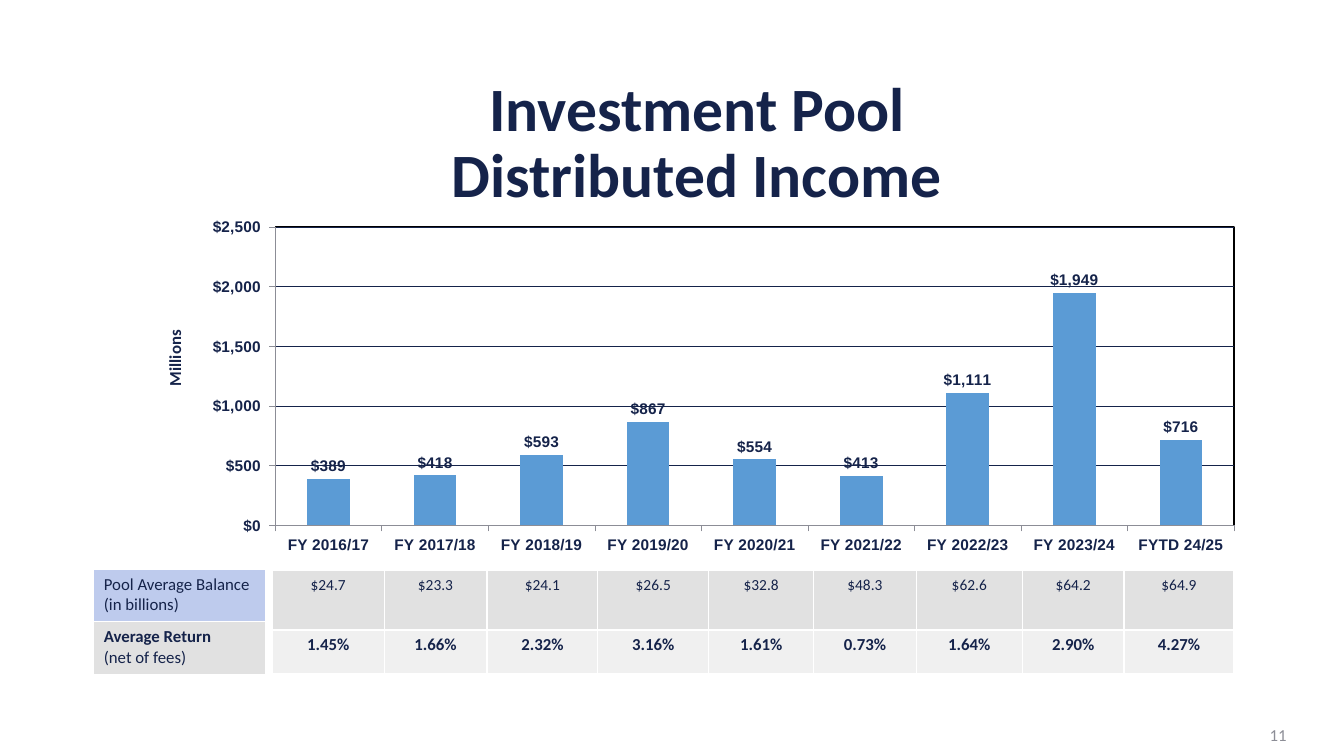
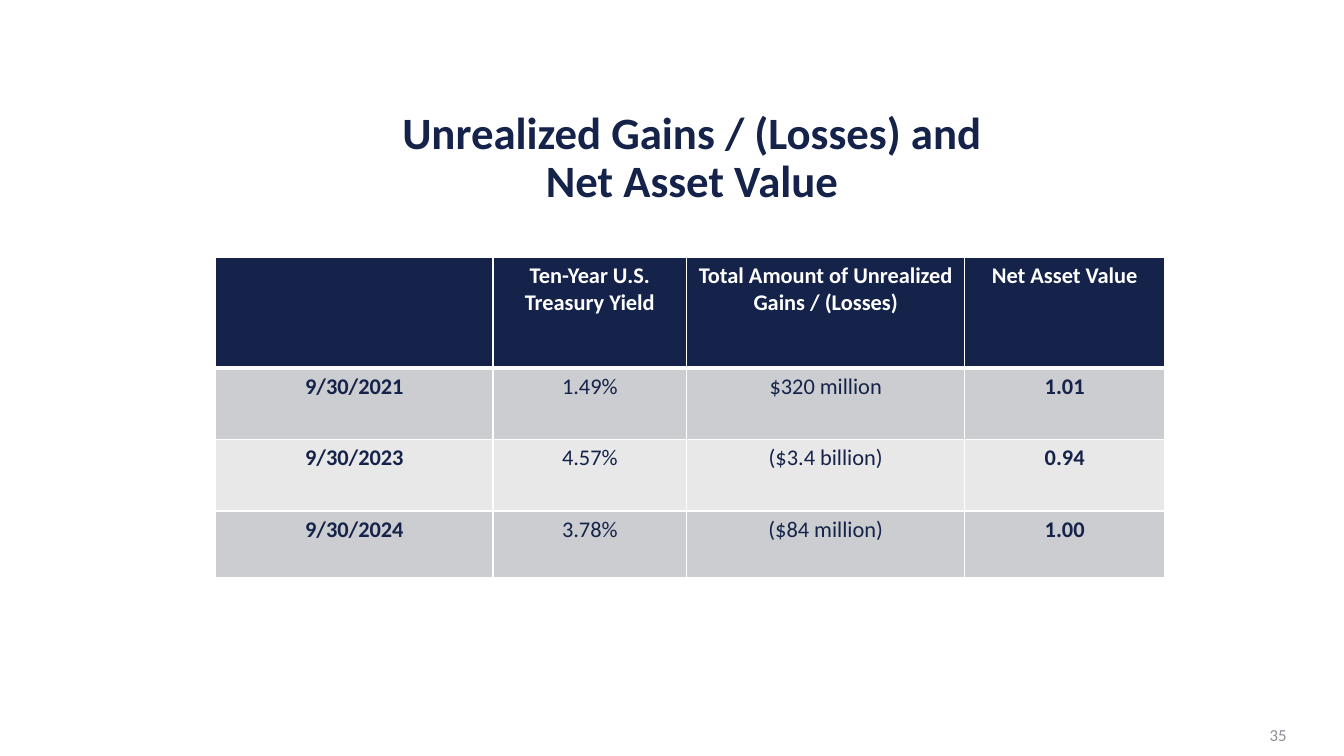
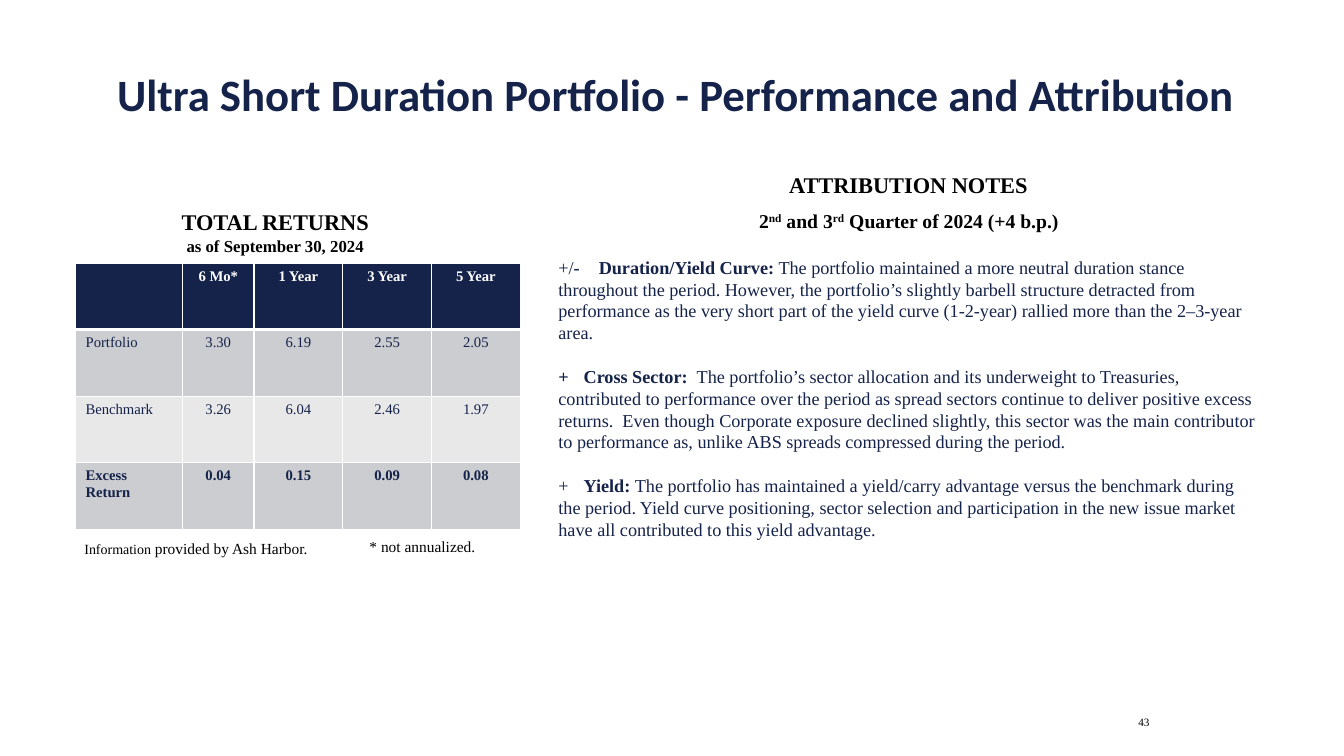
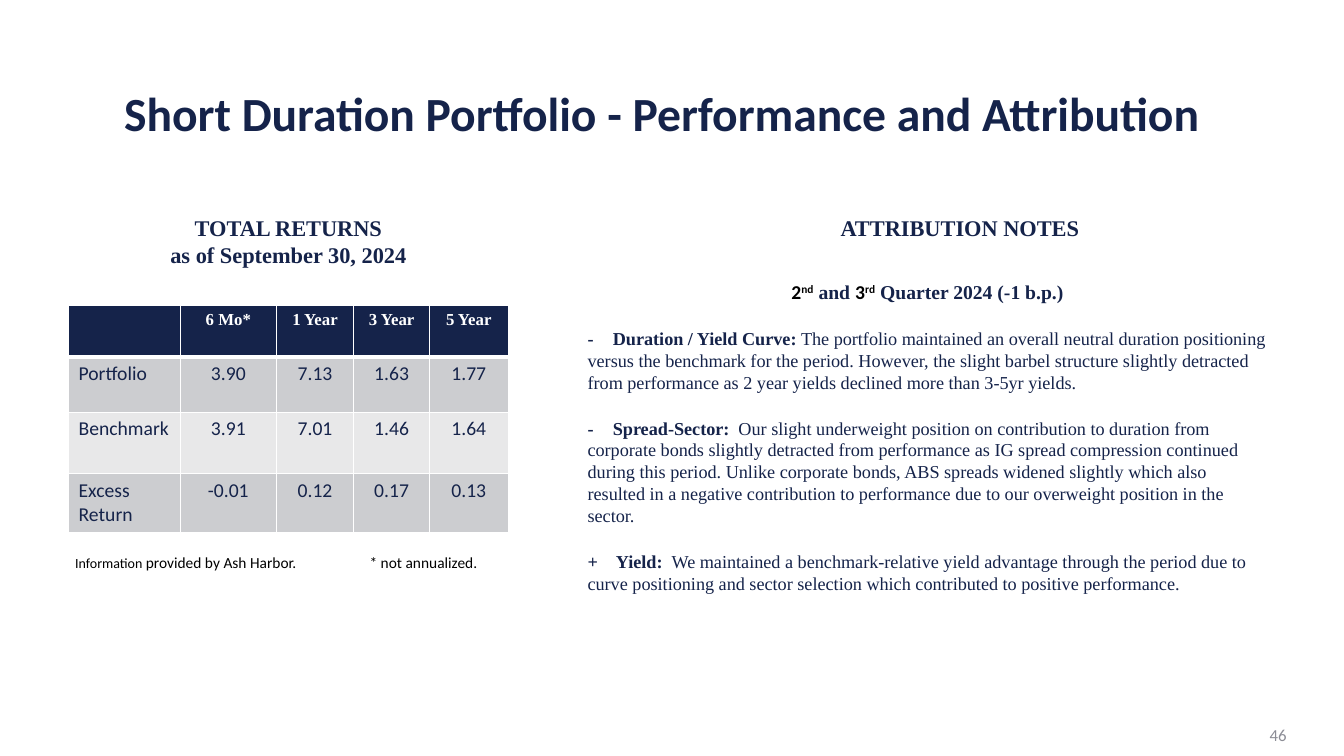
from dataclasses import dataclass

from lxml import etree
from pptx import Presentation
from pptx.chart import data as chart_data
from pptx.dml.color import RGBColor
from pptx.enum import chart as chart_enum
from pptx.enum import text as text_enum
from pptx.oxml import ns, parse_xml
from pptx.util import Inches, Pt


@dataclass(frozen=True)
class Theme:
    navy: str = "15234A"
    black: str = "000000"
    white: str = "FFFFFF"
    gray: str = "8C8D96"
    bar: str = "5B9BD5"
    periwinkle: str = "BECBED"
    silver: str = "E1E1E1"
    mist: str = "F0F0F0"
    band_dark: str = "CCCDD0"
    band_light: str = "E8E8E9"
    sans: str = "Calibri"
    serif: str = "Times New Roman"
    axis_font: str = "Arial"
    title: int = 32
    heading: int = 16
    quarter: int = 14
    note: int = 13
    label: int = 12
    small: int = 11
    tiny: int = 10


@dataclass(frozen=True)
class Style:
    size: float
    font: str
    color: str
    bold: bool = False
    raised: bool = False


THEME = Theme()
ALIGN = text_enum.PP_ALIGN
LEFT, CENTER, RIGHT = ALIGN.LEFT, ALIGN.CENTER, ALIGN.RIGHT
PAGE_STYLE = Style(THEME.label, THEME.sans, THEME.gray)
PAGE_BOX = (9.86, 7.09, 3, 0.4)
NOTE = Style(THEME.note, THEME.serif, THEME.navy)
NOTE_BOLD = Style(THEME.note, THEME.serif, THEME.navy, True)

INCOME = [
    ("FY 2016/17", 389, "$24.7", "1.45%"),
    ("FY 2017/18", 418, "$23.3", "1.66%"),
    ("FY 2018/19", 593, "$24.1", "2.32%"),
    ("FY 2019/20", 867, "$26.5", "3.16%"),
    ("FY 2020/21", 554, "$32.8", "1.61%"),
    ("FY 2021/22", 413, "$48.3", "0.73%"),
    ("FY 2022/23", 1111, "$62.6", "1.64%"),
    ("FY 2023/24", 1949, "$64.2", "2.90%"),
    ("FYTD 24/25", 716, "$64.9", "4.27%"),
]
INCOME_LABELS = [
    ["Pool Average Balance\n(in billions)"],
    ["Average Return\n(net of fees)"],
]
GAINS = [
    ["", "Ten-Year U.S. Treasury Yield", "Total Amount of Unrealized Gains / (Losses)", "Net Asset Value"],
    ["9/30/2021", "1.49%", "$320 million", "1.01"],
    ["9/30/2023", "4.57%", "($3.4 billion)", "0.94"],
    ["9/30/2024", "3.78%", "($84 million)", "1.00"],
]
RETURN_HEADER = ["", "6 Mo*", "1 Year", "3 Year", "5 Year"]

ULTRA_SHORT = {
    "title": "Ultra Short Duration Portfolio - Performance and Attribution",
    "title_box": (0.91, 0.71, 11.59, 0.5),
    "title_size": THEME.title,
    "ink": THEME.black,
    "returns_box": (1.27, 2.02, 2.92, 0.57),
    "date_size": THEME.label,
    "notes_heading_box": (6.97, 1.65, 4.08, 0.37),
    "notes_box": (5.44, 2.02, 7.15, 3.65),
    "quarter": [("2", "black"), ("nd", "raised"), (" and 3", "black"), ("rd", "raised"),
                (" Quarter of 2024 (+4 b.p.)", "black")],
    "quarter_font": THEME.serif,
    "gaps": (17, 15.5, 15.5),
    "notes": [
        (0.4, [("+/", False), ("-", True)], "Duration/Yield Curve: ",
         "The portfolio maintained a more neutral duration stance throughout the period. However, the portfolio’s slightly barbell structure detracted from performance as the very short part of the yield curve (1-2-year) rallied more than the 2–3-year area."),
        (0.25, [("+", True)], "Cross Sector:  ",
         "The portfolio’s sector allocation and its underweight to Treasuries, contributed to performance over the period as spread sectors continue to deliver positive excess returns.  Even though Corporate exposure declined slightly, this sector was the main contributor to performance as, unlike ABS spreads compressed during the period."),
        (0.25, [("+", False)], "Yield: ",
         "The portfolio has maintained a yield/carry advantage versus the benchmark during the period. Yield curve positioning, sector selection and participation in the new issue market have all contributed to this yield advantage."),
    ],
    "table_at": (0.75, 2.61),
    "widths": [1.06, 0.71, 0.88, 0.88, 0.88],
    "heights": [0.66] * 4,
    "header_size": 10.5,
    "body": Style(10.5, THEME.serif, THEME.navy),
    "bold_last": True,
    "returns": [
        ["Portfolio", "3.30", "6.19", "2.55", "2.05"],
        ["Benchmark", "3.26", "6.04", "2.46", "1.97"],
        ["Excess Return", "0.04", "0.15", "0.09", "0.08"],
    ],
    "footnote_font": THEME.serif,
    "source_box": (0.28, 5.3, 3.33, 0.29),
    "annualized_box": (2.4, 5.28, 3.58, 0.29),
    "page": "43",
    "page_box": (10.83, 7, 0.67, 0.33),
    "page_style": Style(8, THEME.serif, THEME.black),
}
SHORT = {
    "title": "Short Duration Portfolio - Performance and Attribution",
    "title_box": (0.68, 0.9, 11.77, 0.5),
    "title_size": 34,
    "ink": THEME.navy,
    "returns_box": (1.4, 2.08, 2.92, 0.64),
    "date_size": THEME.heading,
    "notes_heading_box": (7.48, 2.08, 4.08, 0.37),
    "notes_box": (5.73, 2.73, 6.94, 3.72),
    "quarter": [("2", "black"), ("nd", "raised"), (" and ", "navy"), ("3", "black"),
                ("rd", "raised"), (" Quarter 2024 (-1 b.p.)", "navy")],
    "quarter_font": THEME.sans,
    "gaps": (17, 17, 17),
    "notes": [
        (0.25, [("-", True)], "Duration / Yield Curve: ",
         "The portfolio maintained an overall neutral duration positioning versus the benchmark for the period. However, the slight barbel structure slightly detracted from performance as 2 year yields declined more than 3-5yr yields."),
        (0.25, [("-", True)], "Spread-Sector:  ",
         "Our slight underweight position on contribution to duration from corporate bonds slightly detracted from performance as IG spread compression continued during this period. Unlike corporate bonds, ABS spreads widened slightly which also resulted in a negative contribution to performance due to our overweight position in the sector."),
        (0.28, [("+", True)], "Yield:  ",
         "We maintained a benchmark-relative yield advantage through the period due to curve positioning and sector selection which contributed to positive performance."),
    ],
    "table_at": (0.68, 3.03),
    "widths": [1.11, 0.95, 0.77, 0.75, 0.78],
    "heights": [0.51, 0.55, 0.61, 0.58],
    "header_size": THEME.label,
    "body": Style(14, THEME.sans, THEME.navy),
    "bold_last": False,
    "returns": [
        ["Portfolio", "3.90", "7.13", "1.63", "1.77"],
        ["Benchmark", "3.91", "7.01", "1.46", "1.64"],
        ["Excess Return", "-0.01", "0.12", "0.17", "0.13"],
    ],
    "footnote_font": THEME.sans,
    "source_box": (0.18, 5.44, 3.33, 0.29),
    "annualized_box": (2.41, 5.44, 3.58, 0.29),
    "page": "46",
    "page_box": PAGE_BOX,
    "page_style": PAGE_STYLE,
}


def rgb(color):
    return RGBColor.from_string(color)


def style_font(font, style):
    font.size = Pt(style.size)
    font.name = style.font
    font.bold = style.bold
    font.color.rgb = rgb(style.color)


def add_run(paragraph, content, style):
    run = paragraph.add_run()
    run.text = content
    style_font(run.font, style)
    if style.raised:
        run._r.get_or_add_rPr().set("baseline", "30000")


def fill_frame(frame, paragraphs):
    for index, (align, gap, tab, runs) in enumerate(paragraphs):
        paragraph = frame.add_paragraph() if index else frame.paragraphs[0]
        paragraph.alignment = align
        if tab:
            properties = paragraph._p.get_or_add_pPr()
            tab_list = etree.SubElement(properties, ns.qn("a:tabLst"))
            etree.SubElement(tab_list, ns.qn("a:tab"), pos=str(Inches(tab)), algn="l")
        if gap:
            paragraph.space_before = Pt(gap)
        for content, style in runs:
            add_run(paragraph, content, style)


def add_text(slide, box, paragraphs, anchor=text_enum.MSO_ANCHOR.TOP):
    frame = slide.shapes.add_textbox(*map(Inches, box)).text_frame
    frame.word_wrap = True
    frame.vertical_anchor = anchor
    fill_frame(frame, paragraphs)


def new_slide(presentation, title, box, size, page, page_box=PAGE_BOX, page_style=PAGE_STYLE):
    slide = presentation.slides.add_slide(presentation.slide_layouts[5])
    shape = slide.shapes.title
    shape.left, shape.top, shape.width, shape.height = map(Inches, box)
    frame = shape.text_frame
    frame.word_wrap = True
    frame.auto_size = text_enum.MSO_AUTO_SIZE.NONE
    frame.vertical_anchor = text_enum.MSO_ANCHOR.MIDDLE
    paragraph = frame.paragraphs[0]
    paragraph.alignment = CENTER
    paragraph.line_spacing = 0.9
    for index, line in enumerate(title.split("\n")):
        if index:
            paragraph.add_line_break()
        add_run(paragraph, line, Style(size, THEME.sans, THEME.navy, True))
    add_text(slide, page_box, [(RIGHT, 0, 0, [(page, page_style)])], text_enum.MSO_ANCHOR.MIDDLE)
    return slide


def set_borders(cell, top, bottom):
    properties = cell._tc.get_or_add_tcPr()
    for index, (side, width) in enumerate((("L", 1), ("R", 1), ("T", top), ("B", bottom))):
        properties.insert(index, parse_xml(
            f'<a:ln{side} {ns.nsdecls("a")} w="{Pt(width)}"><a:solidFill>'
            f'<a:srgbClr val="{THEME.white}"/></a:solidFill></a:ln{side}>'))


def add_grid(slide, at, widths, heights, rows, cell_style, header=True):
    box = (*at, sum(widths), sum(heights))
    table = slide.shapes.add_table(len(rows), len(widths), *map(Inches, box)).table
    table.first_row = header
    table.horz_banding = False
    for column, width in zip(table.columns, widths):
        column.width = Inches(width)
    for row, height in zip(table.rows, heights):
        row.height = Inches(height)
    for r, row in enumerate(rows):
        for c, content in enumerate(row):
            cell = table.cell(r, c)
            fill, align, styles = cell_style(r, c)
            cell.fill.solid()
            cell.fill.fore_color.rgb = rgb(fill)
            set_borders(cell, 3 if header and r == 1 else 1, 3 if header and r == 0 else 1)
            if content:
                lines = zip(content.split("\n"), styles)
                fill_frame(cell.text_frame, [(align, 0, 0, [line]) for line in lines])


def band(row):
    if row == 0:
        return THEME.navy
    return THEME.band_dark if row % 2 else THEME.band_light


def set_layout(parent, index, values, inner=False):
    present = parent.find(ns.qn("c:layout"))
    if present is not None:
        parent.remove(present)
    layout = etree.Element(ns.qn("c:layout"))
    manual = etree.SubElement(layout, ns.qn("c:manualLayout"))
    settings = [("layoutTarget", "inner")] if inner else []
    settings += [("xMode", "edge"), ("yMode", "edge"), *zip("xywh", values)]
    for name, value in settings:
        etree.SubElement(manual, ns.qn(f"c:{name}"), val=str(value))
    parent.insert(index, layout)


def add_income_chart(slide):
    data = chart_data.CategoryChartData()
    data.categories = [row[0] for row in INCOME]
    data.add_series("Series 1", [row[1] for row in INCOME])
    chart = slide.shapes.add_chart(
        chart_enum.XL_CHART_TYPE.COLUMN_CLUSTERED,
        *map(Inches, (1.48, 1.82, 10.87, 3.75)), data).chart
    chart.has_title = False
    chart.has_legend = False
    axis_style = Style(THEME.small, THEME.axis_font, THEME.navy, True)
    style_font(chart.font, axis_style)

    for axis in (chart.category_axis, chart.value_axis):
        axis.major_tick_mark = chart_enum.XL_TICK_MARK.OUTSIDE
        axis.minor_tick_mark = chart_enum.XL_TICK_MARK.NONE
        axis.format.line.color.rgb = rgb(THEME.gray)
        axis.format.line.width = Pt(0.5)
        style_font(axis.tick_labels.font, axis_style)

    values = chart.value_axis
    values.minimum_scale, values.maximum_scale, values.major_unit = 0, 2500, 500
    values.tick_labels.number_format = '"$"#,##0_);[Red]\\("$"#,##0\\)'
    values.tick_labels.number_format_is_linked = False
    values.major_gridlines.format.line.color.rgb = rgb(THEME.navy)
    values.major_gridlines.format.line.width = Pt(0.5)
    fill_frame(values.axis_title.text_frame, [
        (CENTER, 0, 0, [("Millions", Style(THEME.label, THEME.sans, THEME.navy, True))])])
    title = values.axis_title._element
    body = title.find(".//" + ns.qn("a:bodyPr"))
    body.set("rot", "-5400000")
    body.set("vert", "horz")
    set_layout(title, 1, (0.01, 0.38))

    plot = chart.plots[0]
    plot.gap_width = 150
    plot.vary_by_categories = False
    series = plot.series[0]
    series.invert_if_negative = False
    series.format.fill.solid()
    series.format.fill.fore_color.rgb = rgb(THEME.bar)
    plot.has_data_labels = True
    labels = plot.data_labels
    labels.show_value = True
    labels.position = chart_enum.XL_LABEL_POSITION.OUTSIDE_END
    labels.number_format = '"$"#,##0'
    labels.number_format_is_linked = False
    style_font(labels.font, axis_style)

    area = chart._chartSpace.chart.plotArea
    set_layout(area, 0, (0.115, 0.115, 0.875, 0.79), inner=True)
    area.append(parse_xml(
        f'<c:spPr {ns.nsdecls("c", "a")}><a:noFill/><a:ln w="{Pt(1)}"><a:solidFill>'
        f'<a:srgbClr val="{THEME.black}"/></a:solidFill></a:ln></c:spPr>'))


def build_income(presentation):
    slide = new_slide(presentation, "Investment Pool\nDistributed Income",
                      (2.5, 0.81, 8.83, 1.25), 44, "11")
    add_income_chart(slide)
    plain = Style(THEME.label, THEME.sans, THEME.navy)
    strong = Style(THEME.label, THEME.sans, THEME.navy, True)
    small = Style(THEME.small, THEME.sans, THEME.navy)

    def label_style(row, column):
        return (THEME.silver, LEFT, [strong, plain]) if row else (THEME.periwinkle, LEFT, [plain, plain])

    def value_style(row, column):
        return (THEME.mist, CENTER, [strong]) if row else (THEME.silver, CENTER, [small])

    add_grid(slide, (0.93, 5.65), [1.7], [0.52, 0.52], INCOME_LABELS, label_style, header=False)
    add_grid(slide, (2.7, 5.66), [1.11, 1.02, 1.1, 1.1, 1.04, 1.02, 1.05, 1.01, 1.09],
             [0.59, 0.43], [[row[2] for row in INCOME], [row[3] for row in INCOME]],
             value_style, header=False)


def build_gains(presentation):
    slide = new_slide(presentation, "Unrealized Gains / (Losses) and\nNet Asset Value",
                      (2.55, 1.32, 8.63, 0.52), THEME.title, "35")

    def cell_style(row, column):
        color = THEME.navy if row else THEME.white
        bold = row == 0 or column in (0, 3)
        return band(row), CENTER, [Style(THEME.heading, THEME.sans, color, bold)]

    add_grid(slide, (2.14, 2.55), [2.75, 1.92, 2.76, 1.98], [1.1, 0.71, 0.71, 0.66],
             GAINS, cell_style)


def build_portfolio(presentation, content):
    slide = new_slide(presentation, content["title"], content["title_box"], content["title_size"],
                      content["page"], content["page_box"], content["page_style"])
    heading = Style(THEME.heading, THEME.serif, content["ink"], True)
    date = Style(content["date_size"], THEME.serif, content["ink"], True)
    add_text(slide, content["returns_box"], [
        (CENTER, 0, 0, [("TOTAL RETURNS", heading)]),
        (CENTER, 0, 0, [("as of September 30, 2024", date)])])
    add_text(slide, content["notes_heading_box"], [
        (CENTER, 0, 0, [("ATTRIBUTION NOTES", heading)])])

    quarter_styles = {
        "black": Style(THEME.quarter, content["quarter_font"], THEME.black, True),
        "raised": Style(THEME.quarter, content["quarter_font"], THEME.black, True, True),
        "navy": Style(THEME.quarter, THEME.serif, THEME.navy, True),
    }
    paragraphs = [(CENTER, 0, 0, [(part, quarter_styles[key]) for part, key in content["quarter"]])]
    for gap, (tab, marker, topic, note) in zip(content["gaps"], content["notes"]):
        runs = [(part, NOTE_BOLD if bold else NOTE) for part, bold in marker]
        runs += [("\t" + topic, NOTE_BOLD), (note, NOTE)]
        paragraphs.append((LEFT, gap, tab, runs))
    add_text(slide, content["notes_box"], paragraphs)

    body = content["body"]
    header = Style(content["header_size"], THEME.serif, THEME.white, True)
    total = Style(body.size, body.font, body.color, content["bold_last"])

    def cell_style(row, column):
        style = header if row == 0 else total if row == 3 else body
        return band(row), CENTER if column else LEFT, [style]

    add_grid(slide, content["table_at"], content["widths"], content["heights"],
             [RETURN_HEADER, *content["returns"]], cell_style)

    tiny, small = (Style(size, content["footnote_font"], THEME.black)
                   for size in (THEME.tiny, THEME.small))
    add_text(slide, content["source_box"], [
        (CENTER, 0, 0, [("Information", tiny), (" provided by Ash Harbor.", small)])])
    add_text(slide, content["annualized_box"], [
        (CENTER, 0, 0, [("* not annualized.", small)])])


def main():
    presentation = Presentation()
    presentation.slide_width, presentation.slide_height = Inches(13.33), Inches(7.5)
    build_income(presentation)
    build_gains(presentation)
    for content in (ULTRA_SHORT, SHORT):
        build_portfolio(presentation, content)
    presentation.save("out.pptx")


if __name__ == "__main__":
    main()
